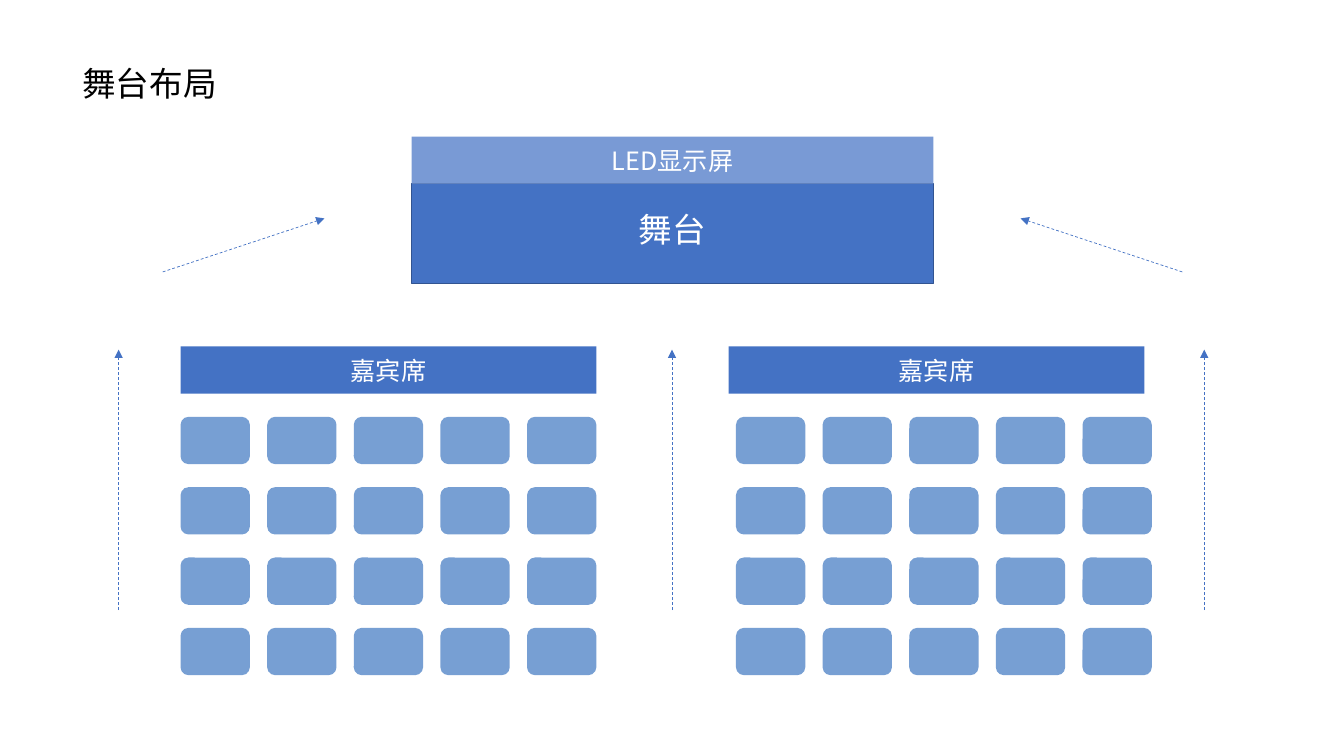
from dataclasses import dataclass

from lxml import etree
from pptx import Presentation
from pptx.dml.color import RGBColor
from pptx.enum.dml import MSO_LINE
from pptx.enum.shapes import MSO_CONNECTOR, MSO_SHAPE
from pptx.enum.text import MSO_ANCHOR, PP_ALIGN
from pptx.oxml.ns import qn
from pptx.util import Pt

RECT, ROUND = MSO_SHAPE.RECTANGLE, MSO_SHAPE.ROUNDED_RECTANGLE
STRAIGHT, DASH = MSO_CONNECTOR.STRAIGHT, MSO_LINE.DASH
CENTER, MIDDLE = PP_ALIGN.CENTER, MSO_ANCHOR.MIDDLE
EMU_PER_PX = 9525


@dataclass(frozen=True)
class Theme:
    font: str = "Noto Sans CJK SC"
    black: str = "000000"
    white: str = "FFFFFF"
    blue: str = "4472C4"
    edge: str = "325491"
    screen: str = "799AD5"
    seat: str = "779FD3"
    large: int = 24
    medium: int = 18


THEME = Theme()


def px(n):
    return round(n * EMU_PER_PX)


def rgb(code):
    return RGBColor.from_string(code)


def set_text(s, text, size, color):
    p = s.text_frame.paragraphs[0]
    p.text = text
    p.font.size, p.font.name = Pt(size), THEME.font
    p.font.color.rgb = rgb(color)
    # East Asian glyphs take their own font setting
    ea = etree.SubElement(p.font._element, qn("a:ea"))
    ea.set("typeface", THEME.font)
    return p


def add_block(slide, kind, x, y, w, h, fill, edge=None):
    s = slide.shapes.add_shape(kind, px(x), px(y), px(w), px(h))
    s.shadow.inherit = False
    s.fill.solid()
    s.fill.fore_color.rgb = rgb(fill)
    if edge:
        s.line.color.rgb = rgb(edge)
        s.line.width = Pt(1)
    else:
        s.line.fill.background()
    return s


def add_label(s, text, size, lift=0):
    tf = s.text_frame
    tf.vertical_anchor = MIDDLE
    tf.margin_top, tf.margin_bottom = 0, px(2 * lift)
    set_text(s, text, size, THEME.white).alignment = CENTER


def add_arrow(slide, x1, y1, x2, y2):
    c = slide.shapes.add_connector(STRAIGHT, px(x1), px(y1), px(x2), px(y2))
    c.line.color.rgb = rgb(THEME.blue)
    c.line.width = Pt(0.5)
    c.line.dash_style = DASH
    etree.SubElement(c.line._get_or_add_ln(), qn("a:tailEnd")).set("type", "triangle")
    etree.SubElement(c._element.spPr, qn("a:effectLst"))


def add_title(slide, x, y, w, h):
    s = slide.shapes.add_textbox(px(x), px(y), px(w), px(h))
    s.text_frame.word_wrap = True
    set_text(s, "舞台布局", THEME.large, THEME.black)


def add_stage(slide, x, y, w, h, screen_h):
    stage = add_block(slide, RECT, x, y + screen_h, w, h - screen_h, THEME.blue, THEME.edge)
    add_label(stage, "舞台", THEME.large, lift=4)
    screen = add_block(slide, RECT, x, y, w, screen_h, THEME.screen)
    add_label(screen, "LED显示屏", THEME.medium)


def add_guest_row(slide, x, y, w, h):
    add_label(add_block(slide, RECT, x, y, w, h, THEME.blue), "嘉宾席", THEME.medium)


def add_seats(slide, x, y, w, h, rows=4, cols=5, seat_w=66, seat_h=45):
    step_x = (w - seat_w) / (cols - 1)
    step_y = (h - seat_h) / (rows - 1)
    for row in range(rows):
        for col in range(cols):
            add_block(slide, ROUND, x + col * step_x, y + row * step_y,
                      seat_w, seat_h, THEME.seat)


def add_routes(slide, x, y, w, h):
    # Aisles: left, centre, right
    for aisle_x in (x, x + 527, x + w):
        add_arrow(slide, aisle_x, y + h, aisle_x, y + 125)
    # Ways up to the stage, one on each side
    add_arrow(slide, x + 42, y + 51, x + 196, y)
    add_arrow(slide, x + w - 21, y + 51, x + w - 175, y)


def main():
    prs = Presentation()
    prs.slide_width, prs.slide_height = px(1280), px(720)
    slide = prs.slides.add_slide(prs.slide_layouts[6])

    add_title(slide, 69, 55, 224, 48)
    # Audience: guest row and seats on each side of the centre aisle
    for guest_x, seats_x in ((172, 172), (694, 701)):
        add_guest_row(slide, guest_x, 330, 396, 45)
        add_seats(slide, seats_x, 397, 396, 246)
    add_stage(slide, 392, 130, 497, 140, screen_h=45)
    add_routes(slide, 113, 208, 1034, 373)

    prs.save("out.pptx")


if __name__ == "__main__":
    main()
